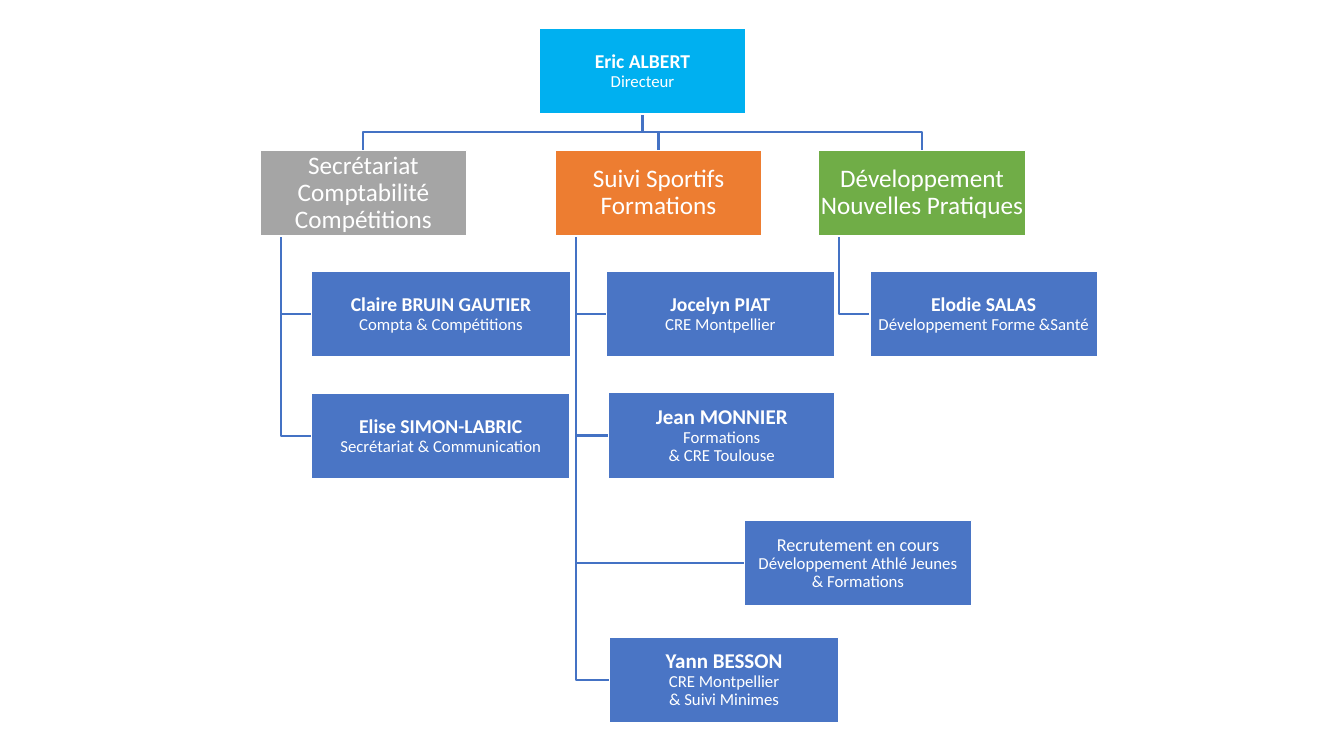
from pptx import Presentation
from pptx import util as u
from pptx.dml.color import RGBColor
from pptx.enum import shapes, text

WHITE = RGBColor(0xFF, 0xFF, 0xFF)
SKY = RGBColor(0x00, 0xB0, 0xF0)
GREY = RGBColor(0xA5, 0xA5, 0xA5)
ORANGE = RGBColor(0xED, 0x7D, 0x31)
GREEN = RGBColor(0x70, 0xAD, 0x47)
STAFF_BLUE = RGBColor(0x4A, 0x75, 0xC5)
LINE_BLUE = RGBColor(0x44, 0x72, 0xC4)

# Lines of text: (wording, size, bold)
DIRECTOR = [("Eric ALBERT", 14, True), ("Directeur", 12, False)]

# Each department: left, colour, lines, staff as (left, top, width, lines)
DEPARTMENTS = [
    (185.8, GREY,
     [("Secrétariat", 18, False), ("Comptabilité", 18, False), ("Compétitions", 18, False)],
     [(222.6, 193.7, 185, [("Claire BRUIN GAUTIER", 14, True),
                           ("Compta & Compétitions", 12, False)]),
      (222.6, 280.9, 184.6, [("Elise SIMON-LABRIC", 14, True),
                             ("Secrétariat & Communication", 12, False)])]),
    (396.6, ORANGE,
     [("Suivi Sportifs", 18, False), ("Formations", 18, False)],
     [(433.4, 193.7, 162.6, [("Jocelyn PIAT", 14, True),
                             ("CRE Montpellier", 12, False)]),
      (434.9, 280.5, 161.4, [("Jean MONNIER", 15, True),
                             ("Formations", 12, False),
                             ("& CRE Toulouse", 12, False)]),
      (531.6, 371.7, 162.6, [("Recrutement en cours", 13, False),
                             ("Développement Athlé Jeunes", 12, False),
                             ("& Formations", 12, False)]),
      (435.6, 455.2, 163.4, [("Yann BESSON", 15, True),
                             ("CRE Montpellier", 12, False),
                             ("& Suivi Minimes", 12, False)])]),
    (584.8, GREEN,
     [("Développement", 18, False), ("Nouvelles Pratiques", 18, False)],
     [(621.4, 193.7, 162.6, [("Elodie SALAS", 14, True),
                             ("Développement Forme &Santé", 12, False)])]),
]

BOX_HEIGHT = 61.2
HEAD_WIDTH = 147.6
DIRECTOR_LEFT, DIRECTOR_TOP = 385.2, 20.2
HEAD_TOP = 107.3
INSET = 0.7


def add_text(frame, lines, font="Calibri", color=WHITE, spacing=0.9):
    """Fill a frame with one centred paragraph, its lines parted by breaks."""
    frame.word_wrap = True
    frame.vertical_anchor = text.MSO_ANCHOR.MIDDLE
    frame.margin_left = frame.margin_right = u.Pt(INSET)
    frame.margin_top = frame.margin_bottom = u.Pt(INSET)
    para = frame.paragraphs[0]
    para.alignment = text.PP_ALIGN.CENTER
    para.line_spacing = spacing
    for index, (wording, size, bold) in enumerate(lines):
        if index:
            para.add_line_break()
        span = para.add_run()
        span.text = wording
        span.font.name = font
        span.font.size = u.Pt(size)
        span.font.bold = bold
        span.font.color.rgb = color


def add_box(slide, left, top, width, fill, lines):
    box = slide.shapes.add_shape(
        shapes.MSO_SHAPE.RECTANGLE,
        u.Pt(left), u.Pt(top), u.Pt(width), u.Pt(BOX_HEIGHT))
    box.shadow.inherit = False
    box.fill.solid()
    box.fill.fore_color.rgb = fill
    box.line.color.rgb = WHITE
    box.line.width = u.Pt(1)
    add_text(box.text_frame, lines)


def add_link(slide, points):
    """Draw an open line with square corners through the points."""
    corners = [(u.Pt(x), u.Pt(y)) for x, y in points]
    builder = slide.shapes.build_freeform(*corners[0])
    builder.add_line_segments(corners[1:], close=False)
    link = builder.convert_to_shape()
    link.shadow.inherit = False
    link.fill.background()
    link.line.color.rgb = LINE_BLUE
    link.line.width = u.Pt(1.5)


def add_links(slide):
    director_x = DIRECTOR_LEFT + HEAD_WIDTH / 2
    director_bottom = DIRECTOR_TOP + BOX_HEIGHT
    bus_y = (director_bottom + HEAD_TOP) / 2
    head_bottom = HEAD_TOP + BOX_HEIGHT
    for left, _, _, staff in DEPARTMENTS:
        head_x = left + HEAD_WIDTH / 2
        add_link(slide, [(director_x, director_bottom), (director_x, bus_y),
                         (head_x, bus_y), (head_x, HEAD_TOP)])
        spine_x = left + HEAD_WIDTH / 10
        for staff_left, top, _, _ in staff:
            middle = top + BOX_HEIGHT / 2
            add_link(slide, [(spine_x, head_bottom), (spine_x, middle),
                             (staff_left, middle)])


def main():
    deck = Presentation()
    deck.slide_width, deck.slide_height = u.Pt(960), u.Pt(540)
    page = deck.slides.add_slide(deck.slide_layouts[6])
    add_links(page)
    add_box(page, DIRECTOR_LEFT, DIRECTOR_TOP, HEAD_WIDTH, SKY, DIRECTOR)
    for left, color, lines, staff in DEPARTMENTS:
        add_box(page, left, HEAD_TOP, HEAD_WIDTH, color, lines)
        for staff_left, top, width, staff_lines in staff:
            add_box(page, staff_left, top, width, STAFF_BLUE, staff_lines)
    deck.save("out.pptx")


if __name__ == "__main__":
    main()
